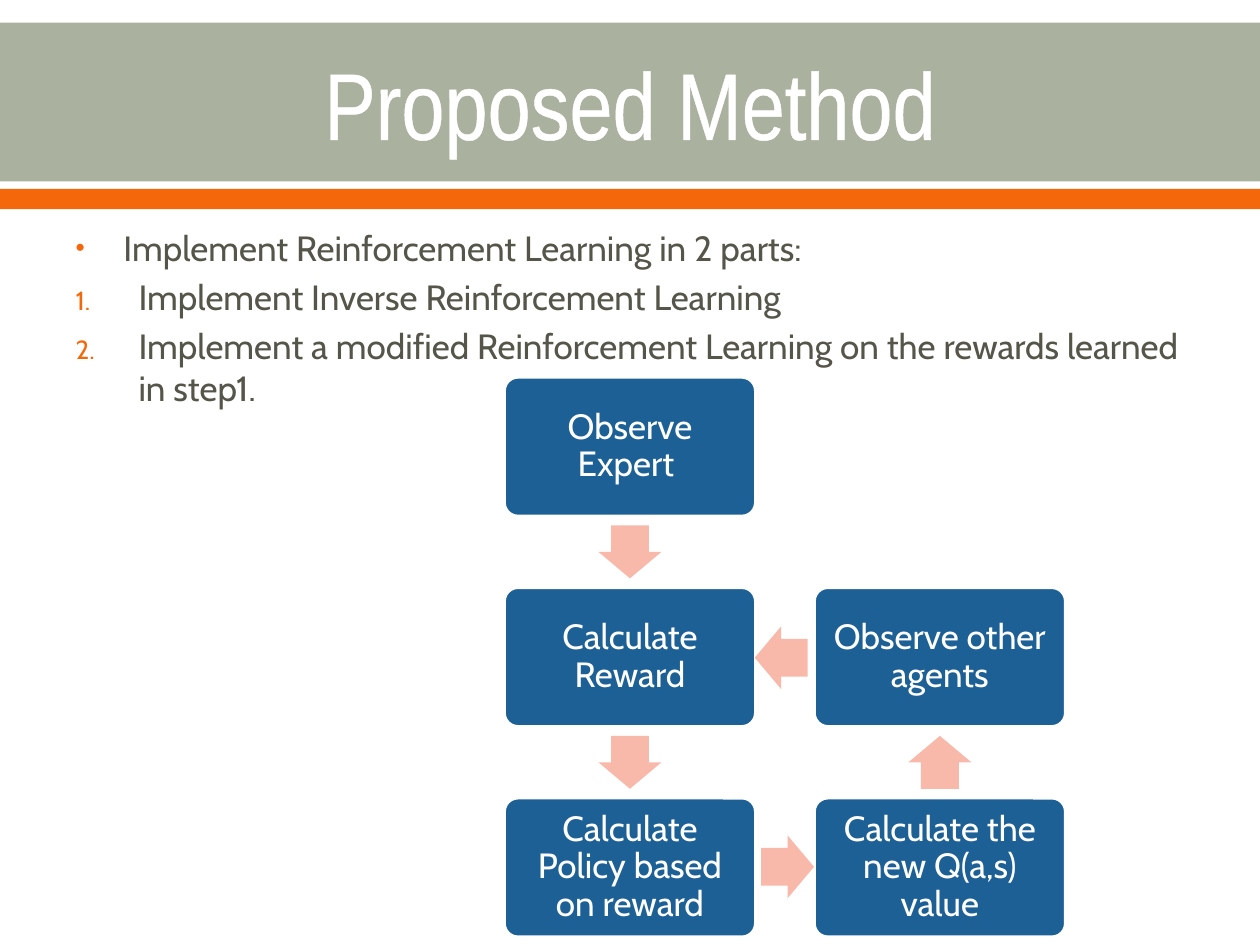
import pptx
import pptx.util
import pptx.dml.color
import pptx.enum.shapes
import pptx.enum.text
import lxml.etree as ET
from pptx.util import Inches, Pt

SHAPE = pptx.enum.shapes.MSO_SHAPE
ALIGN = pptx.enum.text.PP_ALIGN
ANCHOR = pptx.enum.text.MSO_ANCHOR
NS = "http://schemas.openxmlformats.org/drawingml/2006/main"

# Content
TITLE = "Proposed Method"
POINTS = [  # text, indent, bullet tag, bullet settings
    ("Implement Reinforcement Learning in 2 parts:", 0.38,
     "buChar", {"char": "•"}),
    ("Implement Inverse Reinforcement Learning", 0.5,
     "buAutoNum", {"type": "arabicPeriod"}),
    ("Implement a modified Reinforcement Learning on the rewards learned in step1.",
     0.5, "buAutoNum", {"type": "arabicPeriod"}),
]
STEPS = [  # text, column, row
    ("Observe Expert ", 0, 0),
    ("Calculate Reward", 0, 1),
    ("Calculate Policy based on reward", 0, 2),
    ("Calculate the new Q(a,s) value", 1, 2),
    ("Observe other agents", 1, 1),
]
ARROWS = [  # preset, centre x, centre y
    (SHAPE.DOWN_ARROW, 5, 4.38),
    (SHAPE.DOWN_ARROW, 5, 6.05),
    (SHAPE.RIGHT_ARROW, 6.25, 6.88),
    (SHAPE.UP_ARROW, 7.46, 6.05),
    (SHAPE.LEFT_ARROW, 6.2, 5.22),
]
BANDS = [(0.18, 1.26, "ABB19F"), (1.5, 0.16, "F4680B")]

# Flow grid
LEFT, TOP, STEP_X, STEP_Y = 4, 2.99, 2.46, 1.67
BOX_W, BOX_H = 2, 1.11
LONG, WIDE = 0.42, 0.5


def paint(part, code):
    """Set a solid colour on a fill."""
    part.solid()
    part.fore_color.rgb = pptx.dml.color.RGBColor.from_string(code)


def node(parent, tag, **attrs):
    return ET.SubElement(parent, f"{{{NS}}}{tag}", attrs)


def place(shape, x, y, w, h):
    shape.left, shape.top = Inches(x), Inches(y)
    shape.width, shape.height = Inches(w), Inches(h)


def write(para, text, size, font, code):
    run = para.add_run()
    run.text = text
    run.font.size, run.font.name = Pt(size), font
    paint(run.font.fill, code)
    return run


def draw(kind, x, y, w, h, code):
    shape = slide.shapes.add_shape(
        kind, Inches(x), Inches(y), Inches(w), Inches(h))
    shape.shadow.inherit = False
    paint(shape.fill, code)
    shape.line.fill.background()
    return shape


deck = pptx.Presentation()
deck.slide_width, deck.slide_height = Inches(10), Inches(7.5)
slide = deck.slides.add_slide(deck.slide_layouts[1])
title, body = slide.placeholders

# Bands, kept behind the placeholders
for spot, (y, h, code) in enumerate(BANDS):
    band = draw(SHAPE.RECTANGLE, 0, y, 10, h, code)
    slide.shapes._spTree.insert(2 + spot, band._element)

# Title
place(title, 0.5, 0.2, 9, 1.22)
title.text_frame.auto_size = pptx.enum.text.MSO_AUTO_SIZE.NONE
title.text_frame.vertical_anchor = ANCHOR.MIDDLE
para = title.text_frame.paragraphs[0]
para.alignment = ALIGN.CENTER
run = write(para, TITLE, 54, "Arial Narrow", "FFFFFF")
edge = ET.Element(f"{{{NS}}}ln", w=str(Pt(1.1)))
node(node(edge, "solidFill"), "srgbClr", val="FFFFFF")
run.font._element.insert(0, edge)

# List
place(body, 0.5, 1.75, 9, 2.08)
frame = body.text_frame
frame.auto_size = pptx.enum.text.MSO_AUTO_SIZE.NONE
for i, (text, indent, tag, attrs) in enumerate(POINTS):
    para = frame.add_paragraph() if i else frame.paragraphs[0]
    para.space_before = Pt(4)
    props = para._p.get_or_add_pPr()
    props.set("marL", str(Inches(indent)))
    props.set("indent", str(-Inches(indent)))
    node(node(props, "buClr"), "srgbClr", val="F4680B")
    node(props, "buSzPct", val="75000")
    if tag == "buChar":
        node(props, "buFont", typeface="Arial")
    else:
        node(props, "buFontTx")
    node(props, tag, **attrs)
    write(para, text, 20, "Cabin", "55554A")

# Flow boxes
for text, col, row in STEPS:
    box = draw(SHAPE.ROUNDED_RECTANGLE, LEFT + col * STEP_X,
               TOP + row * STEP_Y, BOX_W, BOX_H, "1C6096")
    box.adjustments[0] = 0.1
    paint(box.line.fill, "FFFFFF")
    box.line.width = Pt(2.22)
    frame = box.text_frame
    frame.word_wrap = True
    frame.vertical_anchor = ANCHOR.MIDDLE
    frame.margin_left = frame.margin_right = Inches(0.09)
    frame.margin_top = frame.margin_bottom = Inches(0.09)
    para = frame.paragraphs[0]
    para.alignment = ALIGN.CENTER
    para.line_spacing = 0.9
    write(para, text, 20, "Cabin", "FFFFFF")

# Flow arrows
for kind, x, y in ARROWS:
    flat = kind in (SHAPE.LEFT_ARROW, SHAPE.RIGHT_ARROW)
    w, h = (LONG, WIDE) if flat else (WIDE, LONG)
    arrow = draw(kind, x - w / 2, y - h / 2, w, h, "F8B9AB")
    arrow.adjustments[0], arrow.adjustments[1] = 0.6, 0.5

deck.save("out.pptx")
